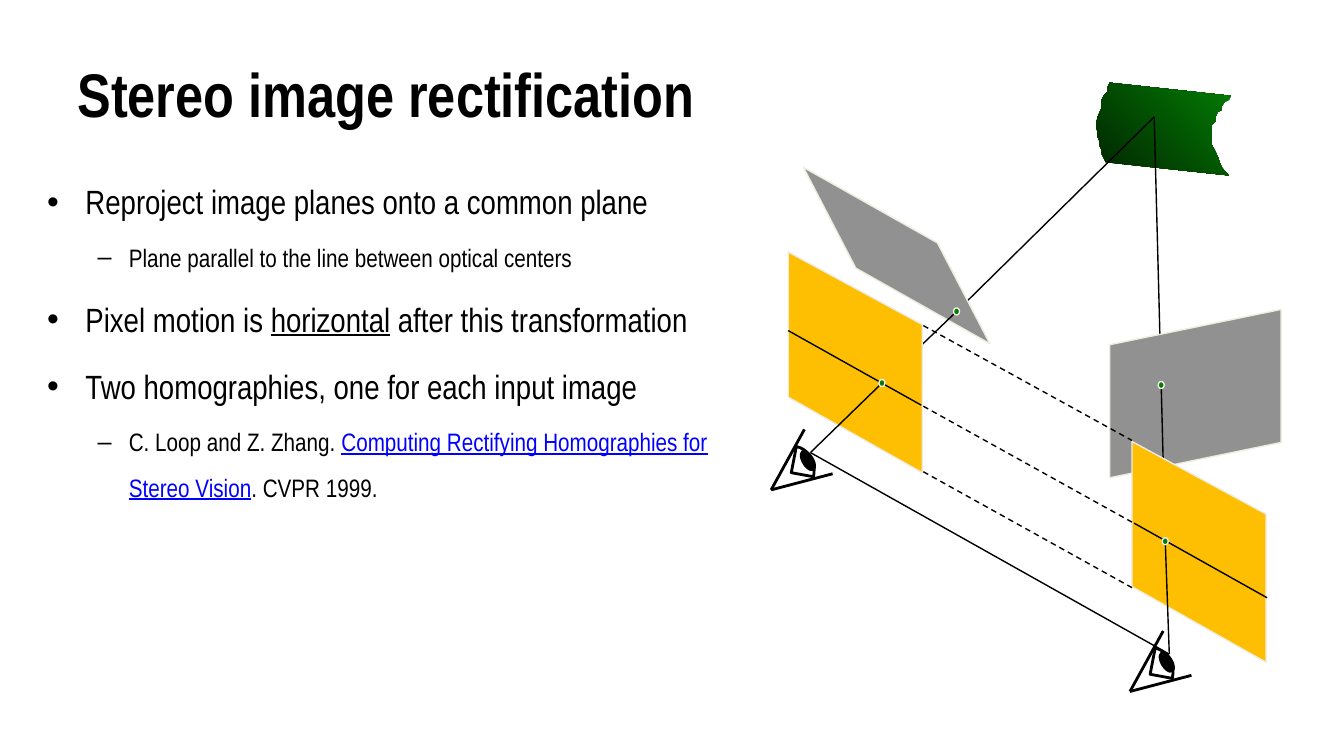
import pptx
import pptx.dml.color
import pptx.enum.dml
import pptx.enum.shapes
import pptx.enum.text
import pptx.oxml.ns
import pptx.util
import lxml.etree

BLACK, WHITE, BLUE = "000000", "FFFFFF", "0000FF"
GRAY, ORANGE, GREEN, DARK_GREEN, EDGE = "919191", "FEBF02", "037C03", "012501", "EEECE1"
FONT = "Arial Narrow"


def color(hex_string):
    return pptx.dml.color.RGBColor.from_string(hex_string)


def cells(count):
    return pptx.util.Inches(count / 10)


def add_span(para, text, size=24, bold=False, underline=False, ink=BLACK):
    span = para.add_run()
    span.text = text
    span.font.name = FONT
    span.font.size = pptx.util.Pt(size)
    span.font.bold = bold
    span.font.underline = underline
    span.font.color.rgb = color(ink)


def add_child(parent, tag, **attributes):
    return lxml.etree.SubElement(parent, pptx.oxml.ns.qn(tag), **attributes)


def add_bullet(para, symbol, margin, hanging):
    properties = para._p.get_or_add_pPr()
    properties.set("marL", str(cells(margin)))
    properties.set("indent", str(-cells(hanging)))
    add_child(add_child(properties, "a:buClr"), "a:srgbClr", val=BLACK)
    add_child(properties, "a:buFont", typeface="Arial")
    add_child(properties, "a:buChar", char=symbol)


def move(points, columns, rows):
    return [(x + columns, y + rows) for x, y in points]


def curve(start, pull_start, pull_end, end, steps=10):
    points = []
    for step in range(steps + 1):
        t = step / steps
        weights = ((1 - t) ** 3, 3 * t * (1 - t) ** 2, 3 * t ** 2 * (1 - t), t ** 3)
        corners = (start, pull_start, pull_end, end)
        points.append(tuple(sum(w * c[axis] for w, c in zip(weights, corners)) for axis in (0, 1)))
    return points


class Sketch:
    def __init__(self, page):
        self.page = page

    def text_box(self, left, top, width, height, anchor):
        box = self.page.shapes.add_textbox(*map(cells, (left, top, width, height)))
        box.text_frame.word_wrap = True
        box.text_frame.vertical_anchor = anchor
        return box.text_frame

    def bullet_list(self, frame, items):
        for index, (level, spans) in enumerate(items):
            para = frame.add_paragraph() if index else frame.paragraphs[0]
            para.level = level
            para.line_spacing = 1.5
            size = (24, 18)[level]
            para.space_before = pptx.util.Pt(size / 5 if index else 0)
            add_bullet(para, "•–"[level], (3.8, 8.1)[level], (3.8, 3.1)[level])
            for text, style in spans:
                add_span(para, text, size=size, **style)

    def finish(self, shape, fill, line, width):
        shape.shadow.inherit = False
        if fill:
            shape.fill.solid()
            shape.fill.fore_color.rgb = color(fill)
        else:
            shape.fill.background()
        if line:
            shape.line.color.rgb = color(line)
            shape.line.width = pptx.util.Pt(width)
        else:
            shape.line.fill.background()
        return shape

    def outline(self, points, fill=None, line=EDGE, width=1):
        corners = [(cells(x), cells(y)) for x, y in points]
        builder = self.page.shapes.build_freeform(*corners[0])
        builder.add_line_segments(corners[1:], close=True)
        return self.finish(builder.convert_to_shape(), fill, line, width)

    def ellipse(self, center, width, height, fill, line, turn=0):
        x, y = center
        shape = self.page.shapes.add_shape(
            pptx.enum.shapes.MSO_SHAPE.OVAL,
            *map(cells, (x - width / 2, y - height / 2, width, height)))
        shape.rotation = turn
        self.finish(shape, fill, line, 1)

    def dot(self, center):
        self.ellipse(center, 0.6, 0.7, GREEN, EDGE)

    def line(self, start, end, width=1, dashed=False):
        connector = self.page.shapes.add_connector(
            pptx.enum.shapes.MSO_CONNECTOR.STRAIGHT, *map(cells, (*start, *end)))
        connector.line.color.rgb = color(BLACK)
        connector.line.width = pptx.util.Pt(width)
        if dashed:
            connector.line.dash_style = pptx.enum.dml.MSO_LINE.DASH
        add_child(connector._element.spPr, "a:effectLst")

    def surface(self, points):
        shape = self.outline(points, line=None)
        shape.fill.gradient()
        shape.fill.gradient_angle = 45
        for stop, ink, position in zip(shape.fill.gradient_stops, (DARK_GREEN, GREEN), (0, 1)):
            stop.color.rgb = color(ink)
            stop.position = position

    def eye(self, columns, rows):
        cornea = curve((79, 44.3), (80.3, 44.6), (81, 45.9), (80.7, 47.3))
        self.outline(move(cornea + [(78.5, 46.9)], columns, rows), line=BLACK, width=2)
        upper_lid, corner, lower_lid, pupil = move(
            [(79.8, 42.6), (76.5, 48.6), (82.6, 47), (80.15, 45.7)], columns, rows)
        self.line(upper_lid, corner, width=2)
        self.ellipse(pupil, 1.1, 2.2, BLACK, BLACK, turn=329)
        self.line(corner, lower_lid, width=2)


TITLE = "Stereo image rectification"
UNDERLINED = {"underline": True}
CITATION = {"underline": True, "ink": BLUE}
ITEMS = [
    (0, [("Reproject image planes onto a common plane", {})]),
    (1, [("Plane parallel to the line between optical centers", {})]),
    (0, [("Pixel motion is ", {}), ("horizontal", UNDERLINED), (" after this transformation", {})]),
    (0, [("Two homographies, one for each input image", {})]),
    (1, [("C. Loop and Z. Zhang. ", {}),
         ("Computing Rectifying Homographies for Stereo Vision", CITATION),
         (". CVPR 1999.", {})]),
]
SURFACE = [
    (110.1, 8.2), (109.9, 8.6), (109.9, 9.1), (109.5, 9.5), (109.3, 9.9), (109.3, 10.7),
    (109.1, 11.1), (108.9, 11.6), (108.8, 12), (108.8, 12.8), (108.9, 13.2), (108.9, 13.6),
    (109.1, 14.1), (109.1, 14.5), (109.3, 14.9), (109.3, 15.3), (109.5, 15.7), (109.7, 16.1),
    (121.9, 17.4), (121.2, 16.6), (121, 16.1), (120.8, 15.5), (120.6, 15.1), (120.4, 14.7),
    (120.2, 14.3), (120.2, 12.4), (120.6, 12), (120.6, 11.6), (120.8, 11.1), (121.2, 10.9),
    (121.2, 10.5), (121.5, 10.1), (121.9, 9.9), (122.1, 9.5),
]
LEFT_IMAGE = [(84.9, 26.6), (98.2, 34.1), (93, 24.1), (79.7, 16.6)]
RIGHT_IMAGE = [(110.1, 34.2), (110.1, 47.4), (127.1, 43.9), (127.1, 30.7)]
COMMON_PLANE = [(78.2, 39.4), (91.5, 46.9), (91.5, 32.2), (78.2, 25)]
PLANE_SHIFT = (34.1, 18.8)
EYE_SHIFT = (35.6, 20)
SCENE_POINT = (114.5, 11.6)
LEFT_EYE, RIGHT_EYE = (80.4, 44.9), (116, 64.9)
LEFT_DOT, RIGHT_DOT = (94.9, 30.9), (115.2, 38.2)
LEFT_TARGET, RIGHT_TARGET = (87.5, 38), (115.6, 53.7)


def main():
    deck = pptx.Presentation()
    deck.slide_width, deck.slide_height = cells(133.33), cells(75)
    page = deck.slides.add_slide(deck.slide_layouts[6])
    page.background.fill.solid()
    page.background.fill.fore_color.rgb = color(WHITE)
    sketch = Sketch(page)

    anchors = pptx.enum.text.MSO_ANCHOR
    title = sketch.text_box(6.7, 3, 120, 12.5, anchors.MIDDLE)
    add_span(title.paragraphs[0], TITLE, size=44, bold=True)
    sketch.bullet_list(sketch.text_box(3.7, 15.5, 73.3, 50.1, anchors.TOP), ITEMS)

    sketch.eye(0, 0)
    sketch.surface(SURFACE)
    sketch.line(LEFT_EYE, RIGHT_EYE)
    sketch.line(LEFT_DOT, SCENE_POINT)
    sketch.outline(LEFT_IMAGE, GRAY)
    sketch.line(RIGHT_DOT, SCENE_POINT)
    sketch.line(LEFT_TARGET, LEFT_DOT)
    sketch.outline(COMMON_PLANE, ORANGE)
    sketch.outline(RIGHT_IMAGE, GRAY)
    sketch.line(RIGHT_TARGET, RIGHT_DOT)
    sketch.outline(move(COMMON_PLANE, *PLANE_SHIFT), ORANGE)
    sketch.line(LEFT_EYE, LEFT_TARGET)
    sketch.line(RIGHT_EYE, RIGHT_TARGET)
    sketch.eye(*EYE_SHIFT)

    for left_row, right_row in ((32.3, 43.7), (46.8, 58.3), (40.3, 51.8)):
        sketch.line((91.6, left_row), (112.3, right_row), dashed=True)
    for start in ((78.2, 32.8), (112.5, 51.9)):
        sketch.line(start, move([start], 13.2, 7.4)[0])
    for center in (RIGHT_DOT, LEFT_DOT, RIGHT_TARGET, LEFT_TARGET):
        sketch.dot(center)
    deck.save("out.pptx")


if __name__ == "__main__":
    main()
